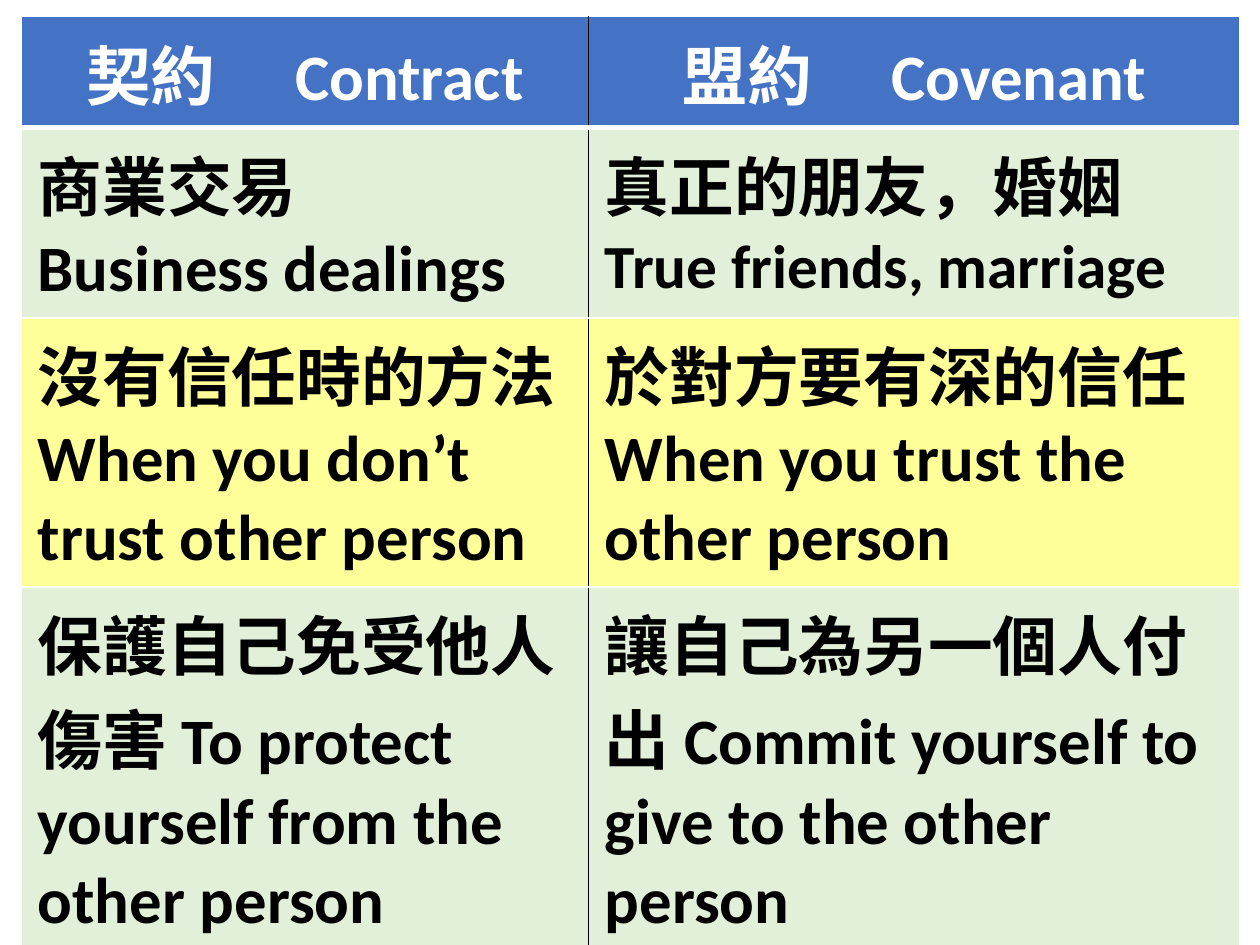
import pptx
import pptx.dml.color
import pptx.enum.text
import pptx.oxml.ns
import pptx.util
from lxml import etree

Inches = pptx.util.Inches
Pt = pptx.util.Pt
qn = pptx.oxml.ns.qn
ALIGN = pptx.enum.text.PP_ALIGN

COLORS = {
    "header": "4472C4",
    "green": "E2F0D9",
    "yellow": "FFFF99",
    "white": "FFFFFF",
    "black": "000000",
}
CJK, LATIN = "Noto Sans CJK SC", "Calibri"


def rgb(name):
    return pptx.dml.color.RGBColor.from_string(COLORS[name])


def add_run(p, text, font=LATIN, size=37, color="black", bold=True):
    r = p.add_run()
    r.text = text
    r.font.name = font
    r.font.size = Pt(size)
    r.font.bold = bold
    r.font.color.rgb = rgb(color)
    ea = etree.SubElement(r.font._element, qn("a:ea"))
    ea.set("typeface", font)
    return r


class Deck:
    """Holds the table style and the current slide."""

    margin_x, margin_y = Inches(0.13), Inches(0.07)

    def __init__(self, prs):
        self.s = prs.slides.add_slide(prs.slide_layouts[6])

    def table(self, left, top, widths, heights):
        shape = self.s.shapes.add_table(
            len(heights), len(widths), Inches(left), Inches(top),
            Inches(sum(widths)), Inches(sum(heights)))
        tbl = shape.table
        tbl.horz_banding = False
        for col, width in zip(tbl.columns, widths):
            col.width = Inches(width)
        for row, height in zip(tbl.rows, heights):
            row.height = Inches(height)
        return tbl

    def cell(self, cell, paragraphs, fill, borders, color="black", align=ALIGN.LEFT):
        cell.margin_left = cell.margin_right = self.margin_x
        cell.margin_top = cell.margin_bottom = self.margin_y
        cell.fill.solid()
        cell.fill.fore_color.rgb = rgb(fill)
        self.borders(cell, borders)
        tf = cell.text_frame
        for i, runs in enumerate(paragraphs):
            p = tf.add_paragraph() if i else tf.paragraphs[0]
            p.alignment = align
            for text, fmt in runs:
                add_run(p, text, color=color, **fmt)

    def borders(self, cell, borders):
        # Border lines must come before the fill in the cell properties
        tc_pr = cell._tc.get_or_add_tcPr()
        for i, (side, (color, width)) in enumerate(borders.items()):
            ln = etree.Element(qn("a:ln" + side), w=str(Pt(width)))
            fill = etree.SubElement(ln, qn("a:solidFill"))
            etree.SubElement(fill, qn("a:srgbClr"), val=COLORS[color])
            tc_pr.insert(i, ln)


def zh(text):
    return text, {"font": CJK}


def en(text, size=37):
    return text, {"font": LATIN, "size": size}


# Each row: fill, then the contract and covenant cells as lists of paragraphs
ROWS = [
    ("header",
     [[zh("契約　 "), en("Contract")]],
     [[zh("盟約　 "), en("Covenant")]]),
    ("green",
     [[zh("商業交易")], [en("Business dealings")]],
     [[zh("真正的朋友，婚姻")], [en("True friends, marriage", 35)]]),
    ("yellow",
     [[zh("沒有信任時的方法")], [en("When you don’t trust other person")]],
     [[zh("於對方要有深的信任 "), en("When you trust the other person")]]),
    ("green",
     [[zh("保護自己免受他人傷害 "), en("To protect yourself from the other person")]],
     [[zh("讓自己為另一個人付出 "), en("Commit yourself to give to the other person")]]),
]


def main():
    prs = pptx.Presentation()
    prs.slide_width, prs.slide_height = Inches(10), Inches(7.5)
    deck = Deck(prs)

    # Comparison table
    tbl = deck.table(0.17, 0.13, [4.5, 5.17], [0.76, 1.38, 2, 2.62])
    for i, (fill, *cells) in enumerate(ROWS):
        header = i == 0
        for j, paragraphs in enumerate(cells):
            # Black divider between columns, heavy white rule under the header
            borders = {
                "L": ("black" if j == 1 else "white", 1),
                "R": ("black" if j == 0 else "white", 1),
                "T": ("white", 3 if i == 1 else 1),
                "B": ("white", 3 if header else 1),
            }
            deck.cell(tbl.cell(i, j), paragraphs, fill, borders,
                      color="white" if header else "black",
                      align=ALIGN.CENTER if header else ALIGN.LEFT)

    prs.save("out.pptx")


if __name__ == "__main__":
    main()
